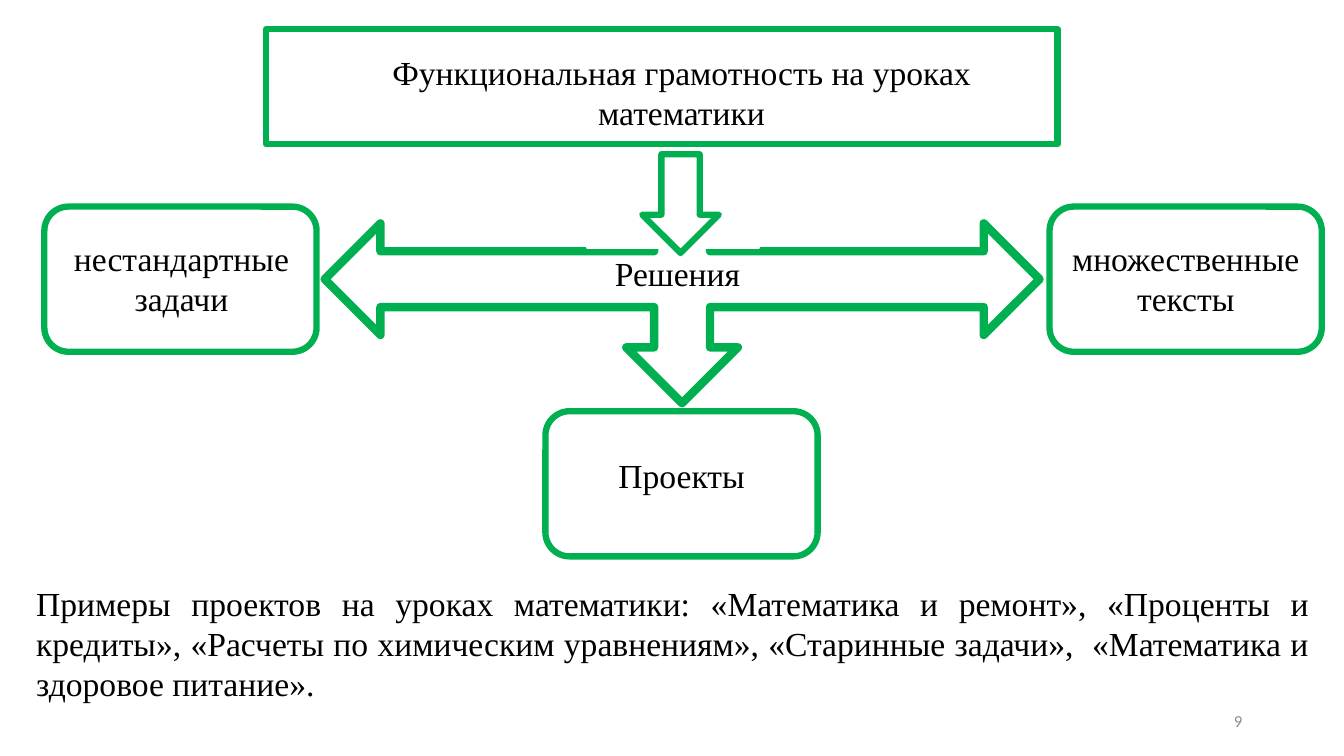
from pptx import Presentation
from pptx.dml.color import RGBColor
from pptx.enum.shapes import MSO_SHAPE as SHAPE
from pptx.enum.text import MSO_ANCHOR as ANCHOR, MSO_AUTO_SIZE as FIT, PP_ALIGN as ALIGN
from pptx.util import Inches, Pt

GREEN = RGBColor(0x00, 0xB0, 0x50)
WHITE = RGBColor(0xFF, 0xFF, 0xFF)
BLACK = RGBColor(0x00, 0x00, 0x00)
GRAY = RGBColor(0x8C, 0x8C, 0x8C)

BRANCH_WIDTH, BRANCH_HEIGHT = 2.7, 1.44
BRANCHES = [
    (0.44, 2.05, "нестандартные задачи", (0.61, 2.31, 2.38, 0.91)),
    (10.41, 2.05, "множественные тексты", (10.49, 2.31, 2.54, 0.91)),
    (5.41, 4.08, "Проекты", (5.49, 4.46, 2.54, 0.5)),
]


class SchemeSlide:
    font = "Times New Roman"
    size = 24

    def __init__(self, prs):
        self.s = prs.slides.add_slide(prs.slide_layouts[5])

    def shape(self, kind, x, y, w, h, line=GREEN, weight=4.5):
        sp = self.s.shapes.add_shape(kind, Inches(x), Inches(y), Inches(w), Inches(h))
        sp.shadow.inherit = False
        sp.fill.solid()
        sp.fill.fore_color.rgb = WHITE
        sp.line.color.rgb = line
        sp.line.width = Pt(weight)
        return sp

    def fill_text(self, sp, text, align=ALIGN.CENTER, font=None, size=None,
                  color=BLACK, anchor=ANCHOR.TOP, fit=FIT.SHAPE_TO_FIT_TEXT):
        tf = sp.text_frame
        tf.word_wrap = True
        tf.auto_size = fit
        tf.vertical_anchor = anchor
        p = tf.paragraphs[0]
        p.alignment = align
        p.line_spacing = 1.0
        r = p.add_run()
        r.text = text
        r.font.name = font or self.font
        r.font.size = Pt(size or self.size)
        r.font.color.rgb = color

    def text(self, text, x, y, w, h, **style):
        sp = self.s.shapes.add_textbox(Inches(x), Inches(y), Inches(w), Inches(h))
        self.fill_text(sp, text, **style)

    def title(self, text, x, y, w, h):
        sp = self.s.shapes.title
        sp.left, sp.top, sp.width, sp.height = map(Inches, (x, y, w, h))
        self.fill_text(sp, text)
        self.s.shapes._spTree.append(sp._element)


def main():
    prs = Presentation()
    prs.slide_width, prs.slide_height = Inches(13.33), Inches(7.5)
    scheme = SchemeSlide(prs)

    scheme.text("Примеры проектов на уроках математики: «Математика и ремонт», "
                "«Проценты и кредиты», «Расчеты по химическим уравнениям», "
                "«Старинные задачи»,  «Математика и здоровое питание».",
                0.26, 5.73, 12.82, 1.31, align=ALIGN.JUSTIFY)

    scheme.shape(SHAPE.QUAD_ARROW, 3.22, 1.54, 7.09, 2.46, weight=6)
    scheme.shape(SHAPE.RECTANGLE, 2.64, 0.29, 7.85, 1.14)
    scheme.title("Функциональная грамотность на уроках математики",
                 2.99, 0.46, 7.54, 0.91)
    scheme.text("Решения", 2.95, 2.46, 7.54, 0.5)

    for x, y, label, label_box in BRANCHES:
        scheme.shape(SHAPE.ROUNDED_RECTANGLE, x, y, BRANCH_WIDTH, BRANCH_HEIGHT)
        scheme.text(label, *label_box)

    scheme.shape(SHAPE.RECTANGLE, 5.82, 1.5, 1.71, 0.96, line=WHITE, weight=1)
    scheme.shape(SHAPE.DOWN_ARROW, 6.37, 1.53, 0.76, 0.98)

    scheme.text("9", 9.42, 6.95, 3, 0.4, align=ALIGN.RIGHT, font="Calibri", size=12,
                color=GRAY, anchor=ANCHOR.MIDDLE, fit=FIT.NONE)

    prs.save("out.pptx")


if __name__ == "__main__":
    main()
